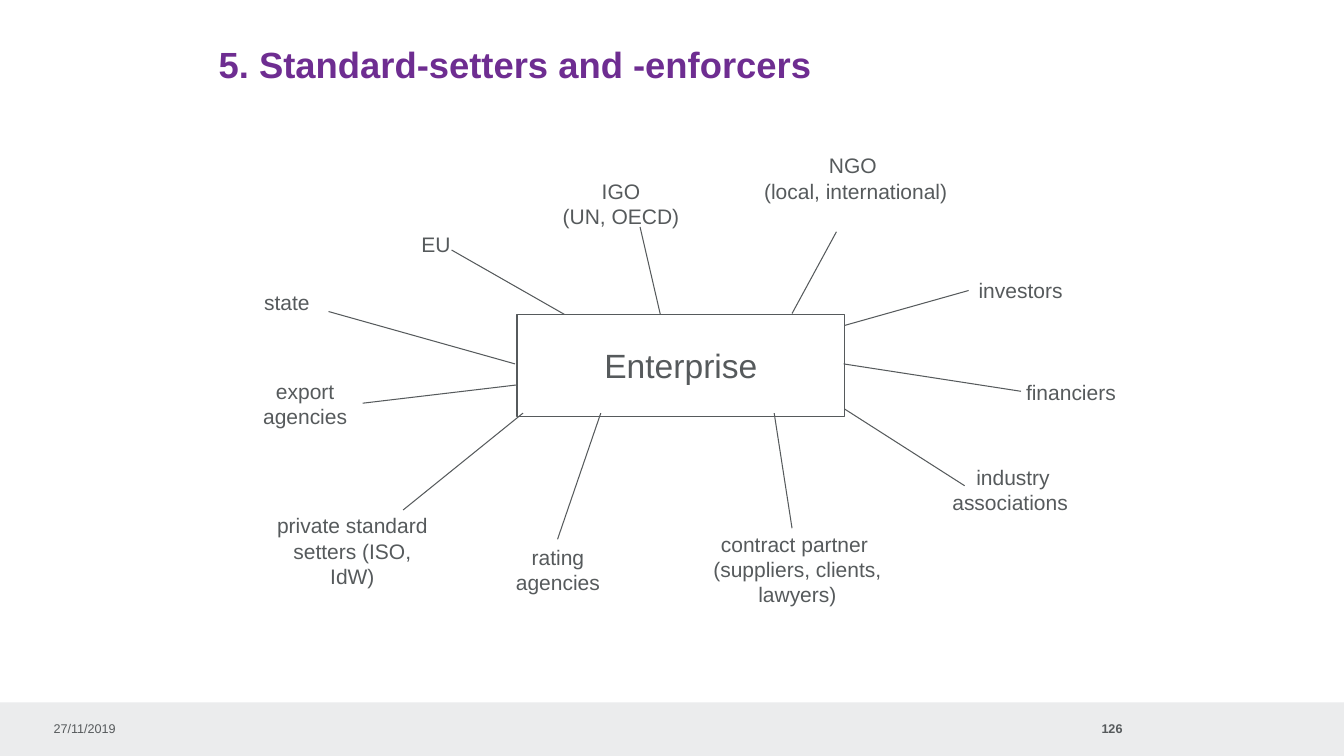
import dataclasses

import lxml.etree
import pptx
import pptx.dml.color
import pptx.enum.shapes
import pptx.enum.text
import pptx.oxml.ns
import pptx.util

Cm = pptx.util.Cm
Pt = pptx.util.Pt
Align = pptx.enum.text.PP_ALIGN
Anchor = pptx.enum.text.MSO_ANCHOR


@dataclasses.dataclass(frozen=True)
class Theme:
    font: str = "Arial"
    ink: str = "565A5C"
    accent: str = "6E2D91"
    band: str = "EBECED"
    title: float = 26
    hub: float = 24
    body: float = 15
    small: float = 9
    line: float = 0.75


def color(code):
    return pptx.dml.color.RGBColor.from_string(code)


def typeset(frame, text, *, font, size, ink, bold=False, align=Align.LEFT,
            anchor=Anchor.TOP, wrap=True, inset=True):
    frame.word_wrap = wrap
    frame.vertical_anchor = anchor
    if not inset:
        frame.margin_left = frame.margin_right = 0
        frame.margin_top = frame.margin_bottom = 0
    for row, words in enumerate(text.split("\n")):
        para = frame.paragraphs[0] if row == 0 else frame.add_paragraph()
        para.alignment = align
        run = para.add_run()
        run.text = words
        run.font.name = font
        run.font.size = Pt(size)
        run.font.bold = bold
        run.font.color.rgb = color(ink)


class Board:
    def __init__(self, slide, theme):
        self.items = slide.shapes
        self.theme = theme

    def label(self, shape, text, **form):
        base = {"font": self.theme.font, "size": self.theme.body, "ink": self.theme.ink}
        typeset(shape.text_frame, text, **(base | form))

    def text(self, place, text, **form):
        self.label(self.items.add_textbox(*map(Cm, place)), text, **form)

    def rect(self, place, fill=None, line=None):
        kind = pptx.enum.shapes.MSO_SHAPE.RECTANGLE
        shape = self.items.add_shape(kind, *map(Cm, place))
        shape.shadow.inherit = False
        if fill:
            shape.fill.solid()
            shape.fill.fore_color.rgb = color(fill)
        else:
            shape.fill.background()
        if line:
            shape.line.color.rgb = color(line)
            shape.line.width = Pt(self.theme.line)
        else:
            shape.line.fill.background()
        return shape

    def spoke(self, ends):
        kind = pptx.enum.shapes.MSO_CONNECTOR.STRAIGHT
        line = self.items.add_connector(kind, *map(Cm, ends))
        line.line.color.rgb = color(self.theme.ink)
        line.line.width = Pt(self.theme.line)
        props = line._element.spPr
        lxml.etree.SubElement(props, pptx.oxml.ns.qn("a:effectLst"))


ACTORS = [
    ("state", (5.64, 7.16, 3.18, 0.89), (8.28, 7.85, 12.98, 9.17)),
    ("EU", (9.4, 5.72, 3.18, 0.89), (11.38, 6.3, 14.22, 7.92)),
    ("IGO\n(UN, OECD)", (13.82, 4.37, 3.66, 1.55), (16.13, 5.72, 16.64, 7.92)),
    ("NGO \n(local, international)", (19, 3.73, 5.13, 2.18), (21.08, 5.84, 19.96, 7.9)),
    ("investors", (24.13, 6.86, 3.18, 0.89), (24.41, 7.32, 21.29, 8.2)),
    ("financiers", (25.4, 9.45, 3.18, 0.89), (25.73, 9.86, 21.26, 9.17)),
    ("industry\nassociations ", (23.65, 11.58, 3.76, 1.55), (24.31, 12.24, 21.29, 10.31)),
    ("contract partner \n(suppliers, clients, lawyers)", (16.92, 13.26, 6.35, 2.18),
     (19.96, 13.31, 19.51, 10.41)),
    ("rating agencies", (12.37, 13.59, 3.38, 1.55), (14.05, 13.59, 15.14, 10.41)),
    ("export agencies", (5.72, 9.42, 3.94, 1.55), (9.14, 10.16, 13.03, 9.7)),
    ("private standard setters (ISO, IdW)", (6.71, 12.8, 4.34, 2.18),
     (10.16, 12.85, 13.18, 10.41)),
]


def main():
    deck = pptx.Presentation()
    deck.slide_width = Cm(33.87)
    deck.slide_height = Cm(19.05)
    theme = Theme()
    board = Board(deck.slides.add_slide(deck.slide_layouts[6]), theme)

    board.rect((0, 17.7, 33.87, 1.35), fill=theme.band)
    board.text((5.26, 0.94, 23.37, 1.09), "5. Standard-setters and -enforcers",
               size=theme.title, ink=theme.accent, bold=True)

    hub = board.rect((13.03, 7.92, 8.26, 2.57), line=theme.ink)
    board.label(hub, "Enterprise", size=theme.hub, align=Align.CENTER, anchor=Anchor.MIDDLE)
    for name, place, ends in ACTORS:
        board.text(place, name, align=Align.CENTER)
        board.spoke(ends)

    foot = {"size": theme.small, "anchor": Anchor.MIDDLE, "inset": False}
    board.text((1.35, 18.16, 8, 0.41), "27/11/2019", **foot)
    board.text((27.76, 18.16, 0.53, 0.41), "126", bold=True, align=Align.RIGHT,
               wrap=False, **foot)
    deck.save("out.pptx")


if __name__ == "__main__":
    main()
